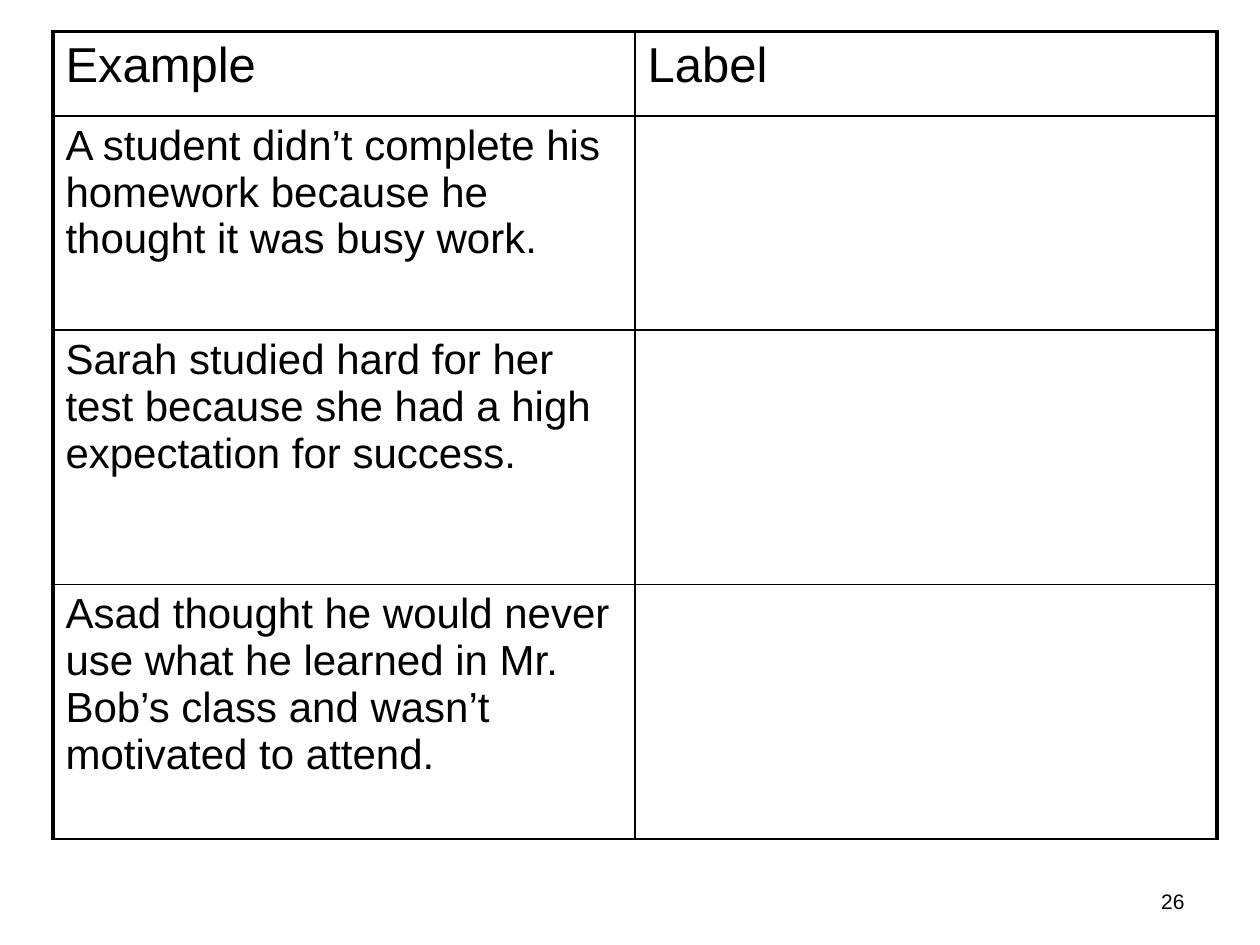
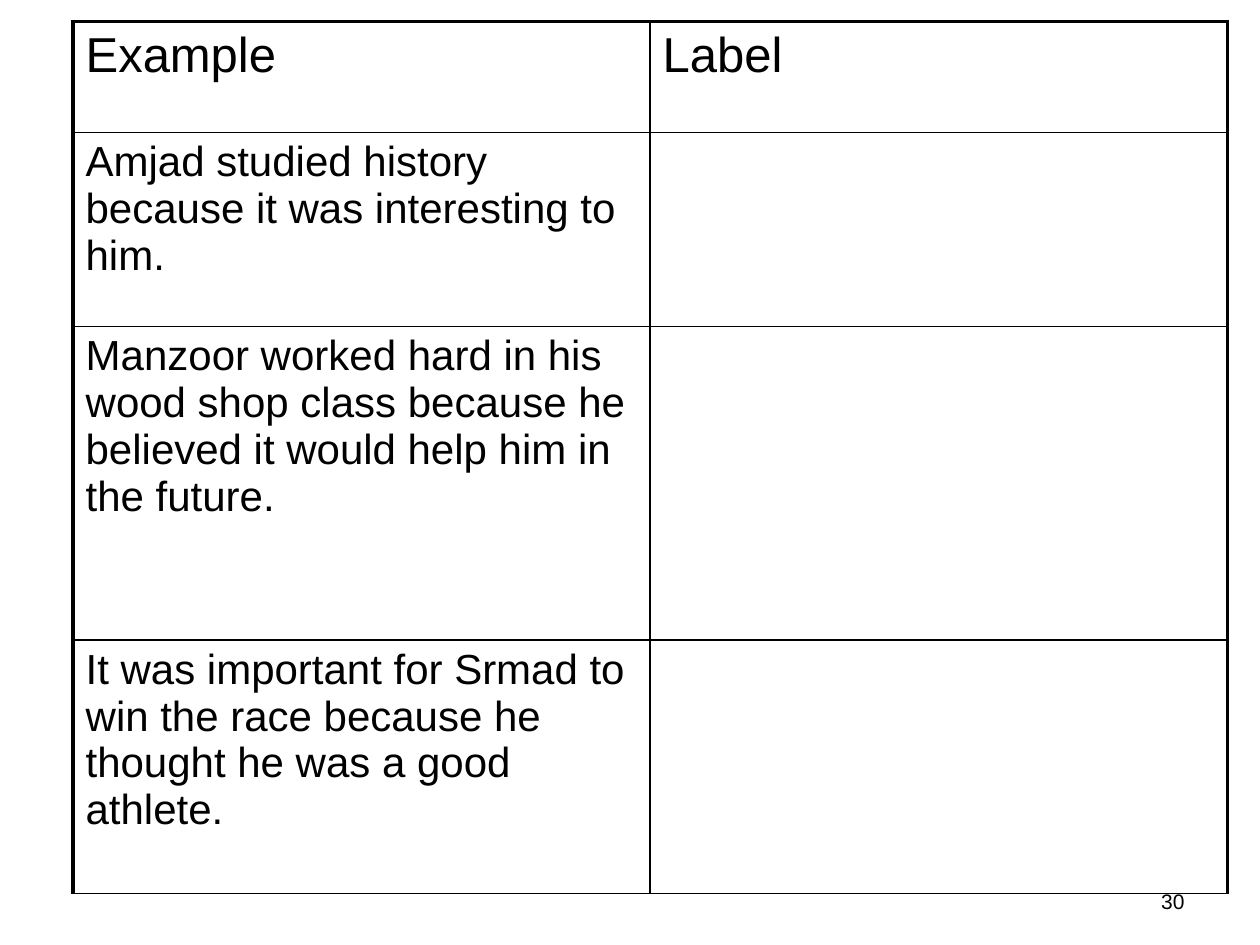
from dataclasses import dataclass

from lxml import etree
from pptx import Presentation
from pptx import util as u
from pptx.dml.color import RGBColor
from pptx.enum import text
from pptx.oxml import ns

HEADINGS = ("Example", "Label")

EXERCISES = [
    {
        "page": "26",
        "corner": (0.42, 0.25),
        "column_width": 4.62,
        "row_heights": (0.67, 1.7, 2.02, 2.02),
        "examples": (
            "A student didn’t complete his homework because he thought it was busy work.",
            "Sarah studied hard for her test because she had a high expectation for success.",
            "Asad thought he would never use what he learned in Mr. Bob’s class "
            "and wasn’t motivated to attend.",
        ),
    },
    {
        "page": "30",
        "corner": (0.58, 0.17),
        "column_width": 4.58,
        "row_heights": (0.88, 1.54, 2.49, 2.01),
        "examples": (
            "Amjad studied history because it was interesting to him.",
            "Manzoor worked hard in his wood shop class because he believed "
            "it would help him in the future.",
            "It was important for Srmad to win the race because he thought "
            "he was a good athlete.",
        ),
    },
]


@dataclass(frozen=True)
class Theme:
    font: str = "Arial"
    ink: str = "000000"
    heading_size: float = 28
    example_size: float = 24
    page_size: float = 12
    frame_line: float = 2.25
    grid_line: float = 1


THEME = Theme()
PAGE_BOX = (7.17, 6.95, 2.33, 0.4)


def write(frame, words, size, align=text.PP_ALIGN.LEFT, anchor=text.MSO_ANCHOR.TOP):
    frame.word_wrap = True
    frame.vertical_anchor = anchor
    paragraph = frame.paragraphs[0]
    paragraph.alignment = align
    run = paragraph.add_run()
    run.text = words
    run.font.name = THEME.font
    run.font.size = u.Pt(size)
    run.font.color.rgb = RGBColor.from_string(THEME.ink)


def rule_cell(cell, widths):
    """Draw the cell's borders; widths maps the sides L, R, T, B to points."""
    properties = cell._tc.get_or_add_tcPr()
    for side in "LRTB":
        line = etree.SubElement(properties, ns.qn(f"a:ln{side}"), w=str(u.Pt(widths[side])))
        fill = etree.SubElement(line, ns.qn("a:solidFill"))
        etree.SubElement(fill, ns.qn("a:srgbClr"), val=THEME.ink)


def add_exercise_table(slide, exercise):
    rows = [HEADINGS] + [(example, "") for example in exercise["examples"]]
    left, top = exercise["corner"]
    width = exercise["column_width"] * len(HEADINGS)
    height = sum(exercise["row_heights"])
    table = slide.shapes.add_table(
        len(rows), len(HEADINGS), *map(u.Inches, (left, top, width, height))
    ).table
    table.first_row = table.horz_banding = False
    for column in table.columns:
        column.width = u.Inches(exercise["column_width"])
    for row, row_height in zip(table.rows, exercise["row_heights"]):
        row.height = u.Inches(row_height)

    for r, row_words in enumerate(rows):
        size = THEME.example_size if r else THEME.heading_size
        for c, words in enumerate(row_words):
            cell = table.cell(r, c)
            rule_cell(cell, {
                "L": THEME.grid_line if c else THEME.frame_line,
                "R": THEME.frame_line if c == len(HEADINGS) - 1 else THEME.grid_line,
                "T": THEME.grid_line if r else THEME.frame_line,
                "B": THEME.grid_line,
            })
            cell.fill.background()
            if words:
                write(cell.text_frame, words, size)


def add_page_number(slide, page):
    box = slide.shapes.add_textbox(*map(u.Inches, PAGE_BOX))
    write(box.text_frame, page, THEME.page_size,
          align=text.PP_ALIGN.RIGHT, anchor=text.MSO_ANCHOR.MIDDLE)


def main():
    deck = Presentation()
    deck.slide_width, deck.slide_height = u.Inches(10), u.Inches(7.5)
    blank = deck.slide_layouts[6]
    for exercise in EXERCISES:
        slide = deck.slides.add_slide(blank)
        add_exercise_table(slide, exercise)
        add_page_number(slide, exercise["page"])
    deck.save("out.pptx")


if __name__ == "__main__":
    main()
